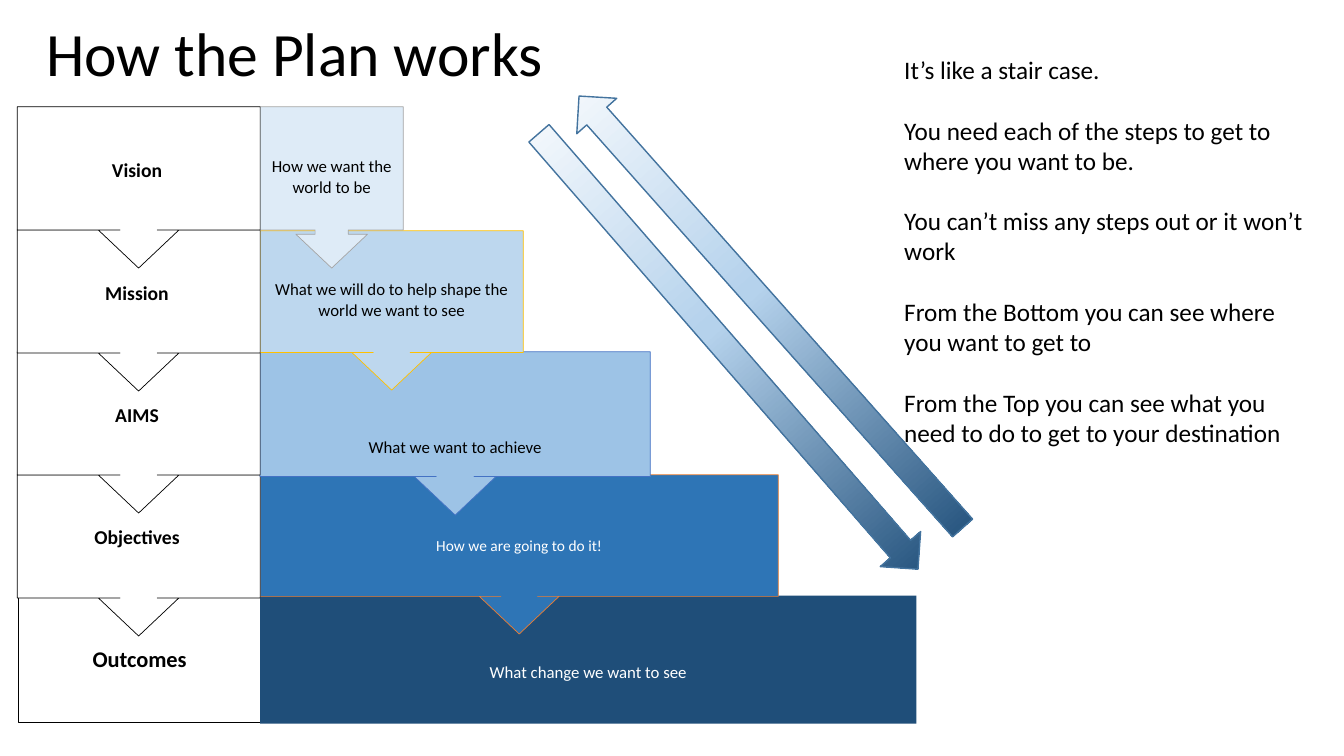
from copy import deepcopy

from pptx import Presentation
from pptx.dml.color import RGBColor
from pptx.enum.shapes import MSO_SHAPE as SHAPE
from pptx.enum.text import MSO_ANCHOR as ANCHOR, PP_ALIGN as ALIGN
from pptx.oxml.ns import qn
from pptx.util import Emu, Pt

PX = 9144  # 100 px to the inch
COLORS = {
    "black": "000000", "white": "FFFFFF", "arrow line": "43739E",
    "vision": "DEEBF7", "mission": "BDD7EE", "aims": "9DC3E6",
    "objectives": "2E75B6", "outcomes": "1F4E79",
    "grey": "A5A5A5", "gold": "FFC000", "blue": "4472C4", "orange": "ED7D31",
}
ARROW_STOPS = [(0, "F7FAFD"), (0.45, "B5D2EC"), (0.46, "B5D2EC"), (1, "1F4E79")]

# label, step text, text size, text colour, step top, width, height, fill, line, text drop
STEPS = [
    ("Vision", "How we want the world to be", 12, "black",
     106, 142, 160, "vision", "grey", 7),
    ("Mission", "What we will do to help shape the world we want to see", 12, "black",
     229, 261, 158, "mission", "gold", 7),
    ("AIMS", "What we want to achieve", 12, "black",
     349, 387, 162, "aims", "blue", 32),
    ("Objectives", "How we are going to do it!", 11, "white",
     471, 514, 158, "objectives", "orange", 9),
]
ADVICE = [
    "It’s like a stair case.",
    "You need each of the steps to get to where you want to be.",
    "You can’t miss any steps out or it won’t work",
    "From the Bottom you can see where you want to get to",
    "From the Top you can see what you need to do to get to your destination",
]
LABEL_TOP, LABEL_PITCH = 106, 121.7
LABEL_X, STEP_X = 17, 258


def px(*values):
    return [Emu(v * PX) for v in values]


def rgb(name):
    return RGBColor.from_string(COLORS[name])


def write(sp, *lines, size=12, color="black", bold=False, align=ALIGN.LEFT,
          anchor=ANCHOR.TOP, gap=0, spacing=1.0, drop=0, right=10):
    """Fill a shape with paragraphs; drop moves middle-anchored text down."""
    tf = sp.text_frame
    tf.word_wrap = True
    tf.vertical_anchor = anchor
    tf.margin_top, tf.margin_right = px(5 + 2 * drop, right)
    for i, line in enumerate(lines):
        p = tf.add_paragraph() if i else tf.paragraphs[0]
        p.alignment = align
        p.line_spacing = spacing
        p.space_before = Pt(gap if i else 0)
        r = p.add_run()
        r.text = line
        r.font.name = "Calibri"
        r.font.size = Pt(size)
        r.font.bold = bold
        r.font.color.rgb = rgb(color)


class Deck:
    def __init__(self, width, height):
        self.prs = Presentation()
        self.prs.slide_width, self.prs.slide_height = px(width, height)
        self.s = self.prs.slides.add_slide(self.prs.slide_layouts[6])

    def text(self, x, y, w, h, *lines, **fmt):
        write(self.s.shapes.add_textbox(*px(x, y, w, h)), *lines, **fmt)

    def shape(self, kind, x, y, w, h, line, weight=0.5):
        sp = self.s.shapes.add_shape(kind, *px(x, y, w, h))
        sp.shadow.inherit = False
        if line:
            sp.line.color.rgb = rgb(line)
            sp.line.width = Pt(weight)
        else:
            sp.line.fill.background()
        return sp

    def box(self, x, y, w, h, text, fill, line, kind=SHAPE.RECTANGLE, head=None, **fmt):
        """Centred text in a rectangle, or in a callout whose body is head of its height."""
        sp = self.shape(kind, x, y, w, h, line)
        sp.fill.solid()
        sp.fill.fore_color.rgb = rgb(fill)
        if head:
            for i, value in enumerate((0.231, 0.25, 0.236, head)):
                sp.adjustments[i] = value
        write(sp, text, align=ALIGN.CENTER, anchor=ANCHOR.MIDDLE, spacing=1.07, **fmt)

    def arrow(self, x, y, w, h, rotation, angle):
        sp = self.shape(SHAPE.RIGHT_ARROW, x, y, w, h, "arrow line", 1)
        sp.rotation = rotation
        sp.fill.gradient()
        sp.fill.gradient_angle = angle
        stops = sp._element.spPr.find(qn("a:gradFill")).find(qn("a:gsLst"))
        while len(stops) < len(ARROW_STOPS):
            stops.append(deepcopy(stops[0]))
        for stop, (position, color) in zip(sp.fill.gradient_stops, ARROW_STOPS):
            stop.position = position
            stop.color.rgb = RGBColor.from_string(color)


def main():
    deck = Deck(1333, 750)
    deck.arrow(436, 322, 573, 53, 49, 0)
    deck.text(887, 49, 416, 434, *ADVICE, size=18, gap=21.6)

    deck.box(18, 587, 241, 130, "Outcomes", "white", "black", size=16, bold=True)
    deck.box(STEP_X, 591, 651, 127, "What change we want to see", "outcomes", None,
             color="white", drop=11)
    for i, step in reversed(list(enumerate(STEPS))):
        label, text, size, color, top, width, height, fill, line, drop = step
        deck.box(STEP_X, top, width, height, text, fill, line, SHAPE.DOWN_ARROW_CALLOUT, 0.764,
                 size=size, color=color, drop=drop)
        deck.box(LABEL_X, round(LABEL_TOP + LABEL_PITCH * i), 241, 160, label, "white", "black",
                 SHAPE.DOWN_ARROW_CALLOUT, 0.78, size=14, bold=True, right=13)

    deck.text(36, 10, 524, 84, "How the Plan works", size=44)
    deck.arrow(478, 283, 573, 53, 228.4, 180)
    deck.prs.save("out.pptx")


if __name__ == "__main__":
    main()
